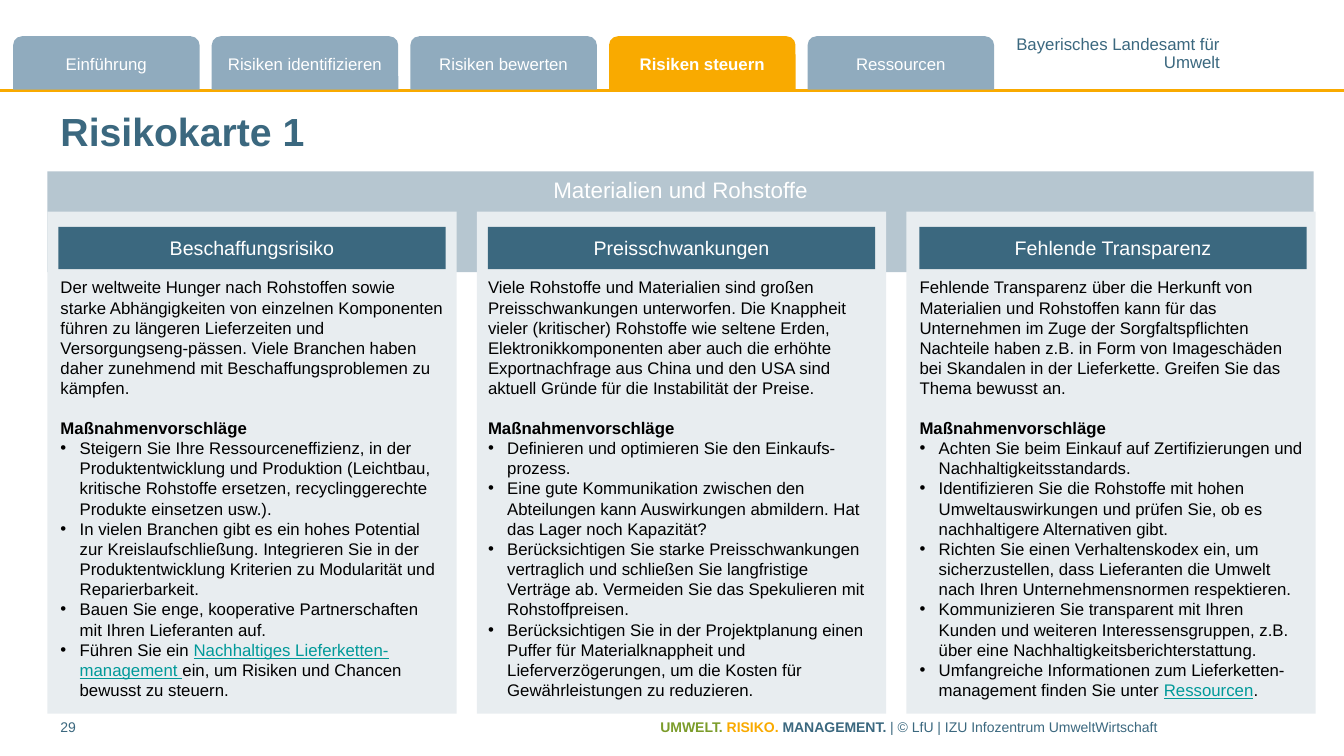
from collections import namedtuple

from lxml.etree import SubElement
from pptx import Presentation
from pptx.dml.color import RGBColor
from pptx.enum.shapes import MSO_CONNECTOR, MSO_SHAPE
from pptx.enum.text import MSO_ANCHOR, PP_ALIGN
from pptx.oxml.ns import qn
from pptx.util import Inches, Pt

COLUMNS, ROWS = 1333, 750
CELL = Inches(0.01)
Box = namedtuple("Box", "left top width height")

NAVY, SLATE, MIST, PALE = "3B687F", "90ABBE", "B6C6D0", "E8EDF0"
AMBER, GREEN, TEAL, WHITE, BLACK = "F9AA00", "7B9C2A", "009999", "FFFFFF", "000000"
LINK = {"color": TEAL, "underline": True}

TABS = ["Einführung", "Risiken identifizieren", "Risiken bewerten", "Risiken steuern", "Ressourcen"]
ACTIVE_TAB = "Risiken steuern"
FOOTER = [
    ("UMWELT. ", {"color": GREEN, "bold": True}),
    ("RISIKO. ", {"color": AMBER, "bold": True}),
    ("MANAGEMENT. ", {"bold": True}),
    ("| © LfU | IZU\u00a0Infozentrum UmweltWirtschaft", {}),
]

Risk = namedtuple("Risk", "heading heading_indent text_indent intro measures")
RISKS = [
    Risk(
        "Beschaffungsrisiko", 11, 13,
        "Der weltweite Hunger nach Rohstoffen sowie starke Abhängigkeiten von einzelnen Komponenten "
        "führen zu längeren Lieferzeiten und Versorgungseng-pässen. Viele Branchen haben daher "
        "zunehmend mit Beschaffungsproblemen zu kämpfen.",
        [
            [("Steigern Sie Ihre Ressourceneffizienz, in der Produktentwicklung und Produktion (Leichtbau, "
              "kritische Rohstoffe ersetzen, recyclinggerechte Produkte einsetzen usw.).", {})],
            [("In vielen Branchen gibt es ein hohes Potential zur Kreislaufschließung. Integrieren Sie in der "
              "Produktentwicklung Kriterien zu Modularität und Reparierbarkeit.", {})],
            [("Bauen Sie enge, kooperative Partnerschaften mit Ihren Lieferanten auf.", {})],
            [("Führen Sie ein ", {}), ("Nachhaltiges Lieferketten-management ", LINK),
             ("ein, um Risiken und Chancen bewusst zu steuern.", {})],
        ],
    ),
    Risk(
        "Preisschwankungen", 11, 11,
        "Viele Rohstoffe und Materialien sind großen Preisschwankungen unterworfen. Die Knappheit vieler "
        "(kritischer) Rohstoffe wie seltene Erden, Elektronikkomponenten aber auch die erhöhte "
        "Exportnachfrage aus China und den USA sind aktuell Gründe für die Instabilität der Preise.",
        [
            [("Definieren und optimieren Sie den Einkaufs-prozess.", {})],
            [("Eine gute Kommunikation zwischen den Abteilungen kann Auswirkungen abmildern. "
              "Hat das Lager noch Kapazität?", {})],
            [("Berücksichtigen Sie starke Preisschwankungen vertraglich und schließen Sie langfristige "
              "Verträge ab. Vermeiden Sie das Spekulieren mit Rohstoffpreisen.", {})],
            [("Berücksichtigen Sie in der Projektplanung einen Puffer für Materialknappheit und "
              "Lieferverzögerungen, um die Kosten für Gewährleistungen zu reduzieren.", {})],
        ],
    ),
    Risk(
        "Fehlende Transparenz", 13, 13,
        "Fehlende Transparenz über die Herkunft von Materialien und Rohstoffen kann für das Unternehmen "
        "im Zuge der Sorgfaltspflichten Nachteile haben z.B. in Form von Imageschäden bei Skandalen in "
        "der Lieferkette. Greifen Sie das Thema bewusst an.",
        [
            [("Achten Sie beim Einkauf auf Zertifizierungen und Nachhaltigkeitsstandards.", {})],
            [("Identifizieren Sie die Rohstoffe mit hohen Umweltauswirkungen und prüfen Sie, ob es "
              "nachhaltigere Alternativen gibt.", {})],
            [("Richten Sie einen Verhaltenskodex ein, um sicherzustellen, dass Lieferanten die Umwelt nach "
              "Ihren Unternehmensnormen respektieren.", {})],
            [("Kommunizieren Sie transparent mit Ihren Kunden und weiteren Interessensgruppen, z.B. über "
              "eine Nachhaltigkeitsberichterstattung.", {})],
            [("Umfangreiche Informationen zum Lieferketten-management finden Sie unter ", {}),
             ("Ressourcen", LINK), (".", {})],
        ],
    ),
]


def rgb(value):
    return RGBColor.from_string(value)


def lengths(box):
    return [CELL * cells for cells in box]


def set_frame(frame, inset=0, anchor=MSO_ANCHOR.TOP, wrap=True, vertical_inset=5):
    values = {
        "margin_left": CELL * inset, "margin_right": CELL * inset,
        "margin_top": CELL * vertical_inset, "margin_bottom": CELL * vertical_inset,
        "vertical_anchor": anchor, "word_wrap": wrap,
    }
    for name, value in values.items():
        setattr(frame, name, value)


def write(para, spans, size, color, **layout):
    for name, value in layout.items():
        setattr(para, name, value)
    for text, changes in spans:
        span = para.add_run()
        span.text = text
        values = {"name": "Arial", "size": Pt(size), "color": color, "bold": False} | changes
        span.font.color.rgb = rgb(values.pop("color"))
        for name, value in values.items():
            setattr(span.font, name, value)


def add_bullet(para):
    properties = para._p.get_or_add_pPr()
    properties.set("marL", str(CELL * 19))
    properties.set("indent", str(-CELL * 19))
    SubElement(properties, qn("a:buFont"), typeface="Arial")
    SubElement(properties, qn("a:buChar"), char="•")


def add_panel(page, box, fill, text="", size=12, bold=False, inset=10,
              anchor=MSO_ANCHOR.MIDDLE, kind=MSO_SHAPE.RECTANGLE):
    panel = page.shapes.add_shape(kind, *lengths(box))
    panel.shadow.inherit = False
    panel.fill.solid()
    panel.fill.fore_color.rgb = rgb(fill)
    panel.line.fill.background()
    if text:
        set_frame(panel.text_frame, inset, anchor)
        write(panel.text_frame.paragraphs[0], [(text, {"bold": bold})], size, WHITE,
              alignment=PP_ALIGN.CENTER)


def add_text(page, box, **frame_values):
    frame = page.shapes.add_textbox(*lengths(box)).text_frame
    set_frame(frame, **frame_values)
    return frame


def add_navigation(page, box):
    bottom = box.top + box.height
    rule = page.shapes.add_connector(MSO_CONNECTOR.STRAIGHT, *lengths((0, bottom, COLUMNS, bottom)))
    rule.line.color.rgb = rgb(AMBER)
    rule.line.width = Pt(2)
    SubElement(rule._element.spPr, qn("a:effectLst"))
    for index, name in enumerate(TABS):
        active = name == ACTIVE_TAB
        add_panel(page, Box(box.left + 197 * index, box.top, 185, box.height - 1),
                  AMBER if active else SLATE, name, bold=active, inset=4,
                  kind=MSO_SHAPE.ROUND_2_SAME_RECTANGLE)
    agency = add_text(page, Box(box.left + 994, box.top + 1, 203, 34), wrap=False, vertical_inset=0)
    for index, line in enumerate(["Bayerisches Landesamt für", "Umwelt"]):
        para = agency.add_paragraph() if index else agency.paragraphs[0]
        write(para, [(line, {})], 12, NAVY, alignment=PP_ALIGN.RIGHT, line_spacing=0.85)


def add_title(page, box):
    title = page.shapes.title
    title.left, title.top, title.width, title.height = lengths(box)
    set_frame(title.text_frame, anchor=MSO_ANCHOR.MIDDLE)
    write(title.text_frame.paragraphs[0], [("Risikokarte 1", {"bold": True})], 28, NAVY,
          alignment=PP_ALIGN.LEFT)


def add_risk(page, box, risk):
    add_panel(page, box, PALE)
    add_panel(page, Box(box.left + risk.heading_indent, box.top + 15, 384, 42), NAVY, risk.heading, 14)
    frame = add_text(page, Box(box.left + risk.text_indent, box.top + 60, 382, 434))
    write(frame.paragraphs[0], [(risk.intro, {})], 12, BLACK)
    write(frame.add_paragraph(), [("Maßnahmenvorschläge", {"bold": True})], 12, BLACK, space_before=Pt(14))
    for measure in risk.measures:
        para = frame.add_paragraph()
        add_bullet(para)
        write(para, measure, 12, BLACK)


def add_risk_card(page, box):
    add_panel(page, Box(box.left, box.top, box.width, 100), MIST, "Materialien und Rohstoffe", 16,
              anchor=MSO_ANCHOR.TOP)
    for index, risk in enumerate(RISKS):
        add_risk(page, Box(box.left + 426 * index, box.top + 40, 406, box.height - 40), risk)


def add_footer(page, box):
    number = add_text(page, Box(box.left, box.top, 70, box.height))
    write(number.paragraphs[0], [("29", {})], 10, NAVY)
    credit = add_text(page, Box(box.left + 595, box.top, box.width - 595, box.height))
    write(credit.paragraphs[0], FOOTER, 10, NAVY)


def main():
    deck = Presentation()
    deck.slide_width, deck.slide_height = CELL * COLUMNS, CELL * ROWS
    page = deck.slides.add_slide(deck.slide_layouts[5])
    add_navigation(page, Box(13, 36, 1200, 54))
    add_title(page, Box(60, 102, 1231, 55))
    add_risk_card(page, Box(47, 170, 1256, 538))
    add_footer(page, Box(60, 708, 1231, 31))
    deck.save("out.pptx")


if __name__ == "__main__":
    main()
